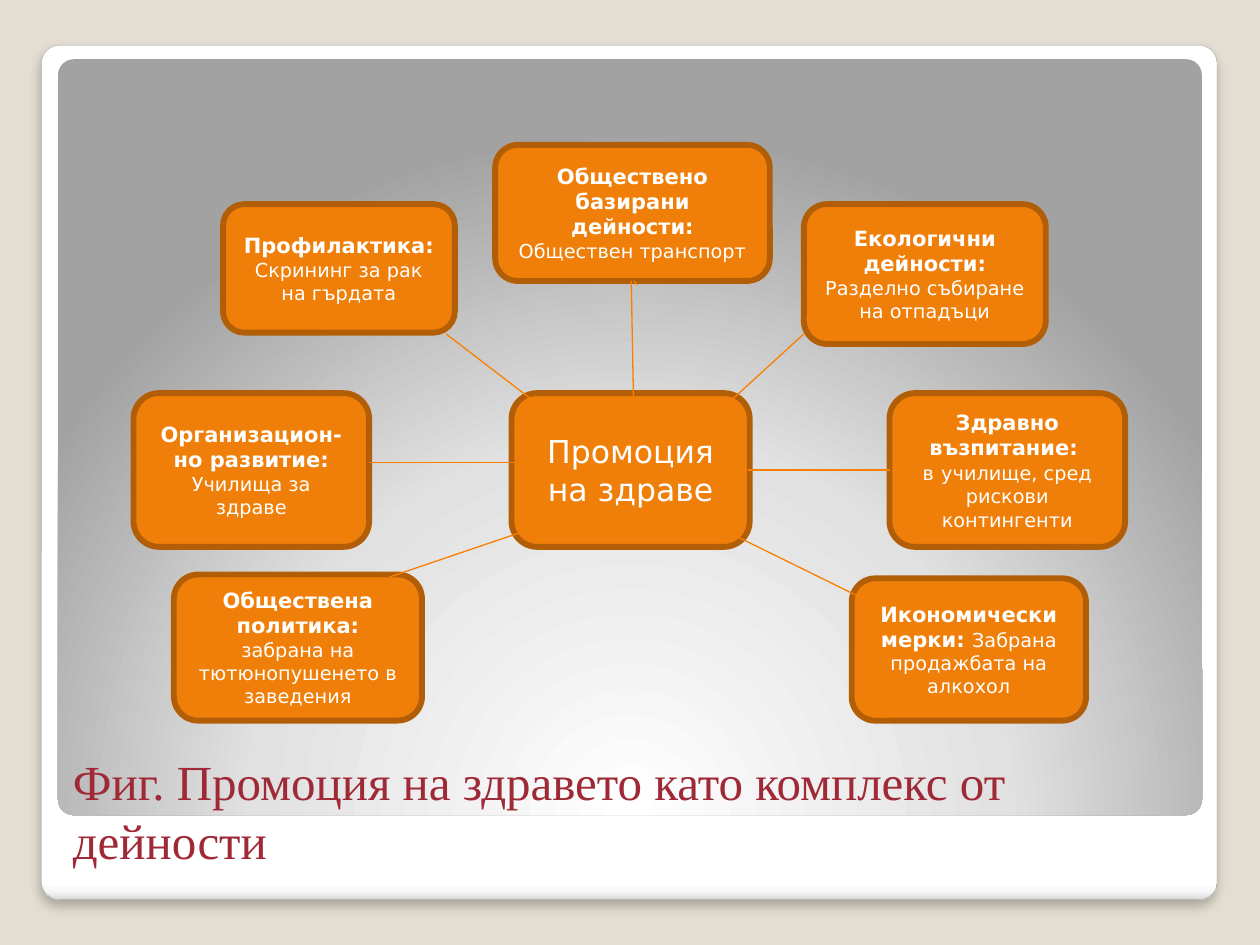
from collections import namedtuple
from dataclasses import dataclass

from pptx import Presentation
from pptx.dml.color import RGBColor
from pptx.enum.shapes import MSO_CONNECTOR, MSO_SHAPE
from pptx.enum.text import MSO_ANCHOR, PP_ALIGN
from pptx.oxml import parse_xml
from pptx.oxml.ns import nsdecls, qn
from pptx.util import Inches, Pt

ROUNDED = MSO_SHAPE.ROUNDED_RECTANGLE
STRAIGHT = MSO_CONNECTOR.STRAIGHT
CENTER = PP_ALIGN.CENTER
MIDDLE, BOTTOM = MSO_ANCHOR.MIDDLE, MSO_ANCHOR.BOTTOM

Box = namedtuple("Box", "x y w h")


@dataclass(frozen=True)
class Theme:
    background: str = "E3DED1"
    frame_line: str = "A4A4A4"
    node: str = "F07F09"
    node_line: str = "B25E07"
    spoke: str = "F97F00"
    node_text: str = "FFFFFF"
    title: str = "9F2936"
    # Gradient stops: position in percent, colour
    frame_stops: tuple = ((0, "FFFFFF"), (98, "FFFFFF"), (99, "F7F7F7"), (100, "DADADA"))
    panel_stops: tuple = ((0, "FFFFFF"), (55, "E1E1E1"), (100, "A2A2A2"))
    body_font: str = "DejaVu Sans"
    title_font: str = "Times New Roman"
    title_size: int = 28
    hub_size: int = 18
    heading_size: int = 12
    detail_size: int = 11


THEME = Theme()

FRAME = Box(0.33, 0.36, 9.33, 6.78)
PANEL = Box(0.46, 0.47, 9.08, 6)
TITLE = Box(0.48, 5.8, 8.95, 1.15)

# Places below are relative to the panel
HUB = Box(3.6, 2.65, 1.89, 1.22)

# Each node: box, then paragraphs of (text, is heading)
NODES = [
    (Box(0.92, 4.09, 1.97, 1.16),
     [[("Обществена политика: ", True), ("забрана на тютюнопушенето в заведения", False)]]),
    (Box(0.6, 2.65, 1.87, 1.22),
     [[("Организацион-но развитие: ", True), ("Училища за здраве", False)]]),
    (Box(3.47, 0.68, 2.18, 1.08),
     [[("Обществено базирани дейности: ", True), ("Обществен транспорт", False)]]),
    (Box(1.31, 1.15, 1.84, 1.02),
     [[("Профилактика: ", True), ("Скрининг за рак на гърдата", False)]]),
    (Box(5.92, 1.15, 1.92, 1.11),
     [[("Екологични дейности: ", True), ("Разделно събиране на отпадъци", False)]]),
    (Box(6.6, 2.65, 1.87, 1.22),
     [[("Здравно възпитание: ", True)],
      [("в", False), (" ", True), ("училище, сред рискови контингенти", False)]]),
    (Box(6.3, 4.12, 1.86, 1.13),
     [[("Икономически мерки: ", True), ("Забрана продажбата на алкохол", False)]]),
]

# Spokes: x1, y1, x2, y2
SPOKES = [
    (2.47, 3.2, 3.69, 3.2),
    (5.48, 3.26, 6.6, 3.26),
    (4.57, 1.76, 4.6, 1.79),
    (4.57, 2.82, 4.55, 1.76),
    (5.31, 3.75, 6.53, 4.35),
    (5.22, 2.82, 5.92, 2.18),
    (3.85, 2.77, 3.08, 2.18),
    (3.69, 3.75, 2.63, 4.11),
]


def rgb(value):
    return RGBColor.from_string(value)


def inches(box):
    return [Inches(v) for v in box]


def within(parent, box):
    return box._replace(x=parent.x + box.x, y=parent.y + box.y)


def add_rounded(slide, box):
    sp = slide.shapes.add_shape(ROUNDED, *inches(box))
    sp.shadow.inherit = False
    return sp


def set_gradient(sp, stops, direction):
    gs = "".join(f'<a:gs pos="{pos * 1000}"><a:srgbClr val="{color}"/></a:gs>'
                 for pos, color in stops)
    sp.fill.background()
    props = sp._element.spPr
    props.replace(props.find(qn("a:noFill")), parse_xml(
        f'<a:gradFill {nsdecls("a")} rotWithShape="1">'
        f'<a:gsLst>{gs}</a:gsLst>{direction}</a:gradFill>'))


def add_frame(slide, box):
    sp = add_rounded(slide, box)
    sp.adjustments[0] = 0.021
    set_gradient(sp, THEME.frame_stops, '<a:lin ang="5400000" scaled="0"/>')
    sp.line.color.rgb = rgb(THEME.frame_line)
    sp.line.width = Pt(0.16)
    sp._element.spPr.find(qn("a:effectLst")).append(parse_xml(
        f'<a:outerShdw {nsdecls("a")} blurRad="{Pt(6)}" dist="{Pt(4)}" dir="5400000" '
        'algn="tl" rotWithShape="0"><a:srgbClr val="000000">'
        '<a:alpha val="25000"/></a:srgbClr></a:outerShdw>'))


def add_panel(slide, box):
    sp = add_rounded(slide, box)
    sp.adjustments[0] = 0.021
    set_gradient(sp, THEME.panel_stops,
                 '<a:path path="circle"><a:fillToRect l="50000" t="175000" '
                 'r="50000" b="-75000"/></a:path>')
    sp.line.fill.background()


def add_node(slide, box):
    sp = add_rounded(slide, box)
    sp.fill.solid()
    sp.fill.fore_color.rgb = rgb(THEME.node)
    sp.line.color.rgb = rgb(THEME.node_line)
    sp.line.width = Pt(3.35)
    tf = sp.text_frame
    tf.word_wrap = True
    tf.vertical_anchor = MIDDLE
    return tf


def style_paragraph(p, font, color, size):
    p.font.name = font
    p.font.color.rgb = rgb(color)
    p.font.size = Pt(size)


def add_hub(slide, box):
    p = add_node(slide, box).paragraphs[0]
    p.text = "Промоция на здраве"
    p.alignment = CENTER
    style_paragraph(p, THEME.body_font, THEME.node_text, THEME.hub_size)


def add_activity(slide, box, paragraphs):
    tf = add_node(slide, box)
    for i, runs in enumerate(paragraphs):
        p = tf.add_paragraph() if i else tf.paragraphs[0]
        p.alignment = CENTER
        style_paragraph(p, THEME.body_font, THEME.node_text, THEME.detail_size)
        for text, heading in runs:
            r = p.add_run()
            r.text = text
            r.font.bold = heading
            r.font.size = Pt(THEME.heading_size if heading else THEME.detail_size)


def add_spoke(slide, box, x1, y1, x2, y2):
    line = slide.shapes.add_connector(
        STRAIGHT, Inches(box.x + x1), Inches(box.y + y1),
        Inches(box.x + x2), Inches(box.y + y2))
    line.line.color.rgb = rgb(THEME.spoke)
    line.line.width = Pt(0.75)
    line._element.spPr.append(parse_xml(f'<a:effectLst {nsdecls("a")}/>'))


def add_diagram(slide, box):
    add_hub(slide, within(box, HUB))
    for node, paragraphs in NODES:
        add_activity(slide, within(box, node), paragraphs)
    for spoke in SPOKES:
        add_spoke(slide, box, *spoke)


def add_title(slide, box):
    tf = slide.shapes.add_textbox(*inches(box)).text_frame
    tf.word_wrap = True
    tf.vertical_anchor = BOTTOM
    p = tf.paragraphs[0]
    p.text = "Фиг. Промоция на здравето като комплекс от дейности"
    style_paragraph(p, THEME.title_font, THEME.title, THEME.title_size)


def main():
    prs = Presentation()
    prs.slide_width, prs.slide_height = Inches(10), Inches(7.5)
    slide = prs.slides.add_slide(prs.slide_layouts[6])
    slide.background.fill.solid()
    slide.background.fill.fore_color.rgb = rgb(THEME.background)

    add_frame(slide, FRAME)
    add_panel(slide, PANEL)
    add_diagram(slide, PANEL)
    add_title(slide, TITLE)
    prs.save("out.pptx")


if __name__ == "__main__":
    main()
